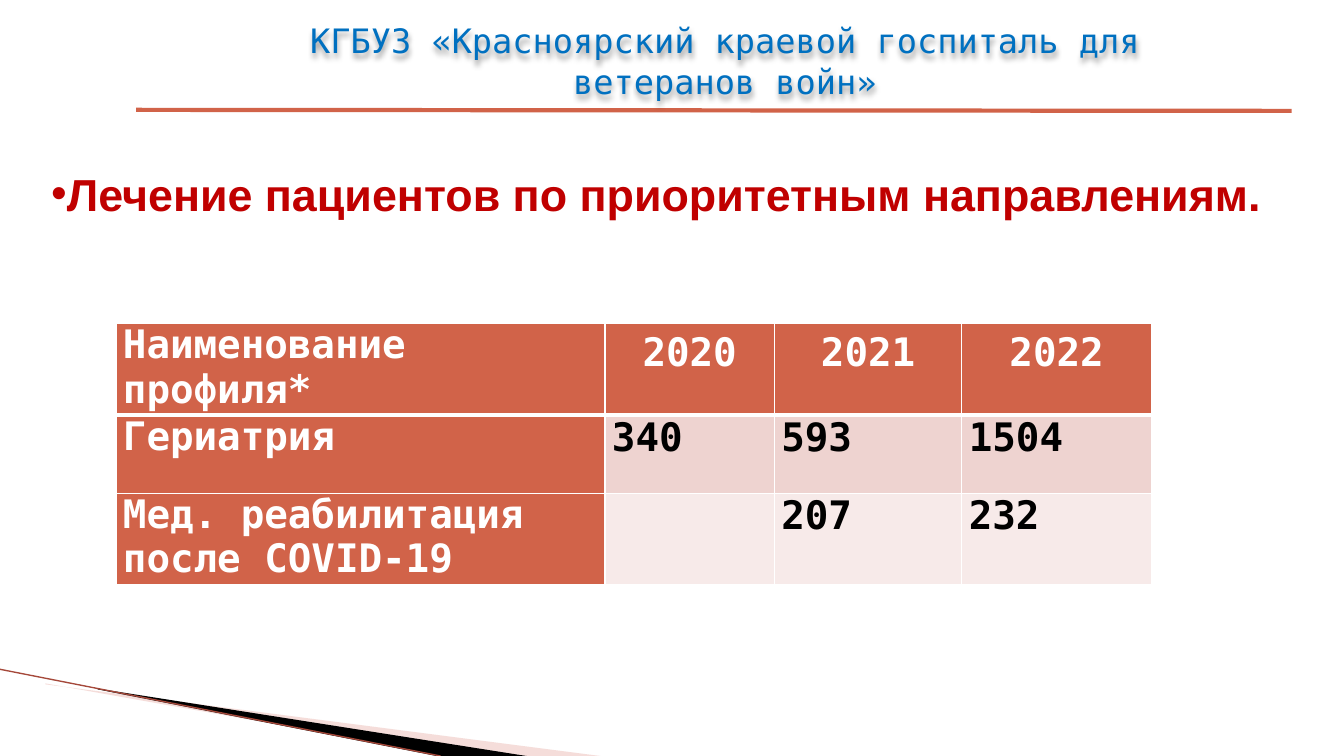
from lxml import etree
from pptx import Presentation
from pptx.dml.color import RGBColor
from pptx.enum.shapes import MSO_CONNECTOR
from pptx.enum.text import MSO_ANCHOR, PP_ALIGN
from pptx.oxml.ns import qn
from pptx.util import Inches, Pt

HEADER = "КГБУЗ «Красноярский краевой госпиталь для ветеранов войн»"
TITLE = "Лечение пациентов по приоритетным направлениям."
ROWS = [
    ("Наименование профиля*", "2020", "2021", "2022"),
    ("Гериатрия", "340", "593", "1504"),
    ("Мед. реабилитация после COVID-19", "", "207", "232"),
]
COL_WIDTHS = [4.85, 1.68, 1.86, 1.88]
ROW_HEIGHTS = [0.88, 0.78, 0.89]
COLORS = {
    "white": "FFFFFF", "black": "000000", "blue": "0070C0", "red": "C00000",
    "accent": "D16349", "band1": "EED3D0", "band2": "F7EAE9",
    "pink": "E7ACA4", "edge": "A5483A",
}
WEDGES = [
    ("pink", 40, [(0.45, 6.79), (6.34, 7.55), (4.78, 7.55), (0.45, 6.78)]),
    ("black", 100, [(0.96, 6.83), (5.41, 7.53), (4.48, 7.53), (0.97, 6.84)]),
]
LINES = [
    ("edge", 0.95, (0, 6.64), (4.37, 7.5)),
    ("accent", 3, (1.35, 1.09), (12.81, 1.1)),
]
MONO = "DejaVu Sans Mono"


def rgb(name):
    return RGBColor.from_string(COLORS[name])


def add_xml(parent, tag, **attrs):
    return etree.SubElement(parent, qn(tag), {k: str(v) for k, v in attrs.items()})


def write(tf, text, size, color, font=MONO, bold=False, align=PP_ALIGN.LEFT,
          spacing=None, bullet=None):
    p = tf.paragraphs[0]
    if bullet:
        pPr = p._p.get_or_add_pPr()
        pPr.set("marL", "0")
        pPr.set("indent", "0")
        add_xml(pPr, "a:buFont", typeface=font)
        add_xml(pPr, "a:buChar", char=bullet)
    p.alignment = align
    if spacing:
        p.line_spacing = spacing
    r = p.add_run()
    r.text = text
    r.font.name, r.font.size, r.font.bold = font, Pt(size), bold
    r.font.color.rgb = rgb(color)


def text_box(s, box, text, inset=0.05, **fmt):
    sp = s.shapes.add_textbox(*map(Inches, box))
    tf = sp.text_frame
    tf.word_wrap = True
    tf.vertical_anchor = MSO_ANCHOR.TOP
    tf.margin_top = Inches(inset)
    write(tf, text, **fmt)
    return sp


def add_shadow(sp):
    effects = add_xml(sp._element.spPr, "a:effectLst")
    shadow = add_xml(effects, "a:outerShdw", blurRad=Pt(4), dist=Pt(3),
                     dir=5400000, algn="t", rotWithShape=0)
    add_xml(add_xml(shadow, "a:srgbClr", val=COLORS["black"]), "a:alpha", val=40000)


def add_wedge(s, color, opacity, points):
    fb = s.shapes.build_freeform(*map(Inches, points[0]))
    fb.add_line_segments([tuple(map(Inches, pt)) for pt in points[1:]], close=True)
    sp = fb.convert_to_shape()
    sp.shadow.inherit = False
    sp.fill.solid()
    sp.fill.fore_color.rgb = rgb(color)
    if opacity < 100:
        clr = sp._element.spPr.find(qn("a:solidFill")).find(qn("a:srgbClr"))
        add_xml(clr, "a:alpha", val=opacity * 1000)
    sp.line.fill.background()


def add_line(s, color, width, start, end):
    line = s.shapes.add_connector(MSO_CONNECTOR.STRAIGHT, *map(Inches, start + end))
    line.line.color.rgb = rgb(color)
    line.line.width = Pt(width)
    add_xml(line._element.spPr, "a:effectLst")


def set_borders(cell, **widths):
    tcPr = cell._tc.get_or_add_tcPr()
    for side, width in widths.items():
        ln = add_xml(tcPr, "a:ln" + side, w=Pt(width))
        add_xml(add_xml(ln, "a:solidFill"), "a:srgbClr", val=COLORS["white"])


def add_profile_table(s):
    table = s.shapes.add_table(
        len(ROWS), len(COL_WIDTHS), Inches(1.15), Inches(3.21),
        Inches(sum(COL_WIDTHS)), Inches(sum(ROW_HEIGHTS))).table
    for col, width in zip(table.columns, COL_WIDTHS):
        col.width = Inches(width)
    for i, (row, height) in enumerate(zip(ROWS, ROW_HEIGHTS)):
        table.rows[i].height = Inches(height)
        for j, text in enumerate(row):
            cell = table.cell(i, j)
            set_borders(cell, L=1, R=1, T=3 if i == 1 else 1, B=3 if i == 0 else 1)
            heading = i == 0 or j == 0
            year = i == 0 and j > 0
            cell.fill.solid()
            cell.fill.fore_color.rgb = rgb("accent" if heading else f"band{i}")
            cell.margin_left = cell.margin_right = Inches(0.07)
            cell.margin_top = cell.margin_bottom = 0
            if text:
                write(cell.text_frame, text, 28, "white" if heading else "black",
                      bold=True, align=PP_ALIGN.CENTER if year else PP_ALIGN.LEFT,
                      spacing=1.15 if year else 0.97 if j == 0 else None)


def main():
    prs = Presentation()
    prs.slide_width, prs.slide_height = Inches(13.33), Inches(7.5)
    s = prs.slides.add_slide(prs.slide_layouts[6])
    for wedge in WEDGES:
        add_wedge(s, *wedge)
    for line in LINES:
        add_line(s, *line)
    add_shadow(text_box(s, (2.19, 0.15, 10, 0.88), HEADER, size=24, color="blue",
                        align=PP_ALIGN.CENTER))
    add_profile_table(s)
    sp = text_box(s, (0.41, 1.6, 12.43, 0.94), TITLE, inset=0.05, size=32,
                  color="red", font="Arial", bold=True, bullet="•")
    sp.fill.solid()
    sp.fill.fore_color.rgb = rgb("white")
    prs.save("out.pptx")


if __name__ == "__main__":
    main()
